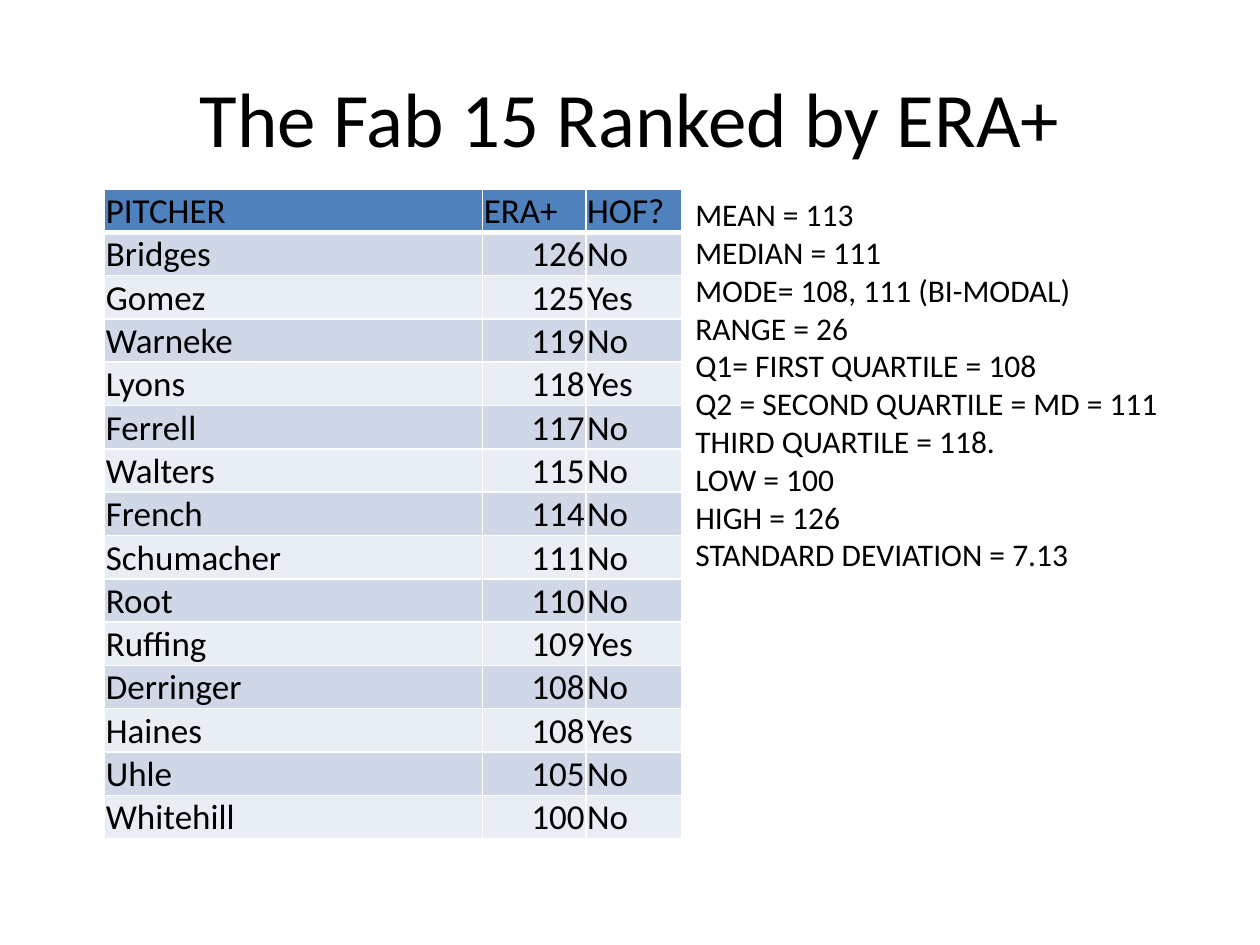
from lxml.etree import SubElement
from pptx import Presentation
from pptx.dml.color import RGBColor as RGB
from pptx.enum.text import MSO_ANCHOR as Anchor, MSO_AUTO_SIZE as Fit, PP_ALIGN as Align
from pptx.oxml.ns import qn
from pptx.util import Inches, Pt

BLACK = RGB(0x00, 0x00, 0x00)
WHITE = RGB(0xFF, 0xFF, 0xFF)
BLUE = RGB(0x4F, 0x81, 0xBD)
DARK = RGB(0xD0, 0xD8, 0xE8)
LIGHT = RGB(0xE9, 0xED, 0xF4)

STATS = [
    "MEAN = 113",
    "MEDIAN = 111",
    "MODE= 108, 111 (BI-MODAL)",
    "RANGE = 26",
    "Q1= FIRST QUARTILE = 108",
    "Q2 = SECOND QUARTILE = MD = 111",
    "THIRD QUARTILE = 118.",
    "LOW = 100",
    "HIGH = 126",
    "STANDARD DEVIATION = 7.13",
]
ROWS = [
    ("PITCHER", "ERA+", "HOF?"),
    ("Bridges", "126", "No"),
    ("Gomez", "125", "Yes"),
    ("Warneke", "119", "No"),
    ("Lyons", "118", "Yes"),
    ("Ferrell", "117", "No"),
    ("Walters", "115", "No"),
    ("French", "114", "No"),
    ("Schumacher", "111", "No"),
    ("Root", "110", "No"),
    ("Ruffing", "109", "Yes"),
    ("Derringer", "108", "No"),
    ("Haines", "108", "Yes"),
    ("Uhle", "105", "No"),
    ("Whitehill", "100", "No"),
]
WIDTHS = [3, 0.82, 0.76]
ROW_H = 0.33


def write(frame, text, size, align=Align.LEFT):
    """Fill a text frame, one paragraph per line of text."""
    frame.word_wrap = True
    frame.text = text
    for para in frame.paragraphs:
        para.alignment = align
        font = para.runs[0].font
        font.name, font.size, font.bold = "Calibri", Pt(size), False
        font.color.rgb = BLACK


def rule(cell, side, width):
    """Draw one white border of a table cell."""
    line = SubElement(cell._tc.get_or_add_tcPr(), qn(f"a:ln{side}"), w=str(Pt(width)))
    fill = SubElement(line, qn("a:solidFill"))
    SubElement(fill, qn("a:srgbClr"), val=str(WHITE))


deck = Presentation()
deck.slide_width, deck.slide_height = Inches(10), Inches(7.5)
slide = deck.slides.add_slide(deck.slide_layouts[6])

# Title
title = slide.shapes.add_textbox(Inches(0.5), Inches(0.3), Inches(9), Inches(1.25))
write(title.text_frame, "The Fab 15 Ranked by ERA+", size=44, align=Align.CENTER)
title.text_frame.vertical_anchor = Anchor.MIDDLE

# Pitcher table
table = slide.shapes.add_table(
    len(ROWS), len(WIDTHS), Inches(0.83), Inches(1.5),
    Inches(sum(WIDTHS)), Inches(ROW_H * len(ROWS))).table
for col, width in zip(table.columns, WIDTHS):
    col.width = Inches(width)
for r, row in enumerate(ROWS):
    table.rows[r].height = Inches(ROW_H)
    shade = BLUE if r == 0 else DARK if r % 2 else LIGHT
    for c, text in enumerate(row):
        cell = table.cell(r, c)
        number = r > 0 and c == 1
        write(cell.text_frame, text, size=20, align=Align.RIGHT if number else Align.LEFT)
        cell.vertical_anchor = Anchor.BOTTOM
        cell.margin_left = cell.margin_right = cell.margin_top = Inches(0.01)
        cell.margin_bottom = 0
        for side in "LRTB":
            thick = (r, side) in [(0, "B"), (1, "T")]
            rule(cell, side, 3 if thick else 1)
        cell.fill.solid()
        cell.fill.fore_color.rgb = shade

# Summary statistics
stats = slide.shapes.add_textbox(Inches(5.42), Inches(1.5), Inches(4.25), Inches(3.13))
write(stats.text_frame, "\n".join(STATS), size=18)
stats.text_frame.auto_size = Fit.SHAPE_TO_FIT_TEXT

deck.save("out.pptx")
